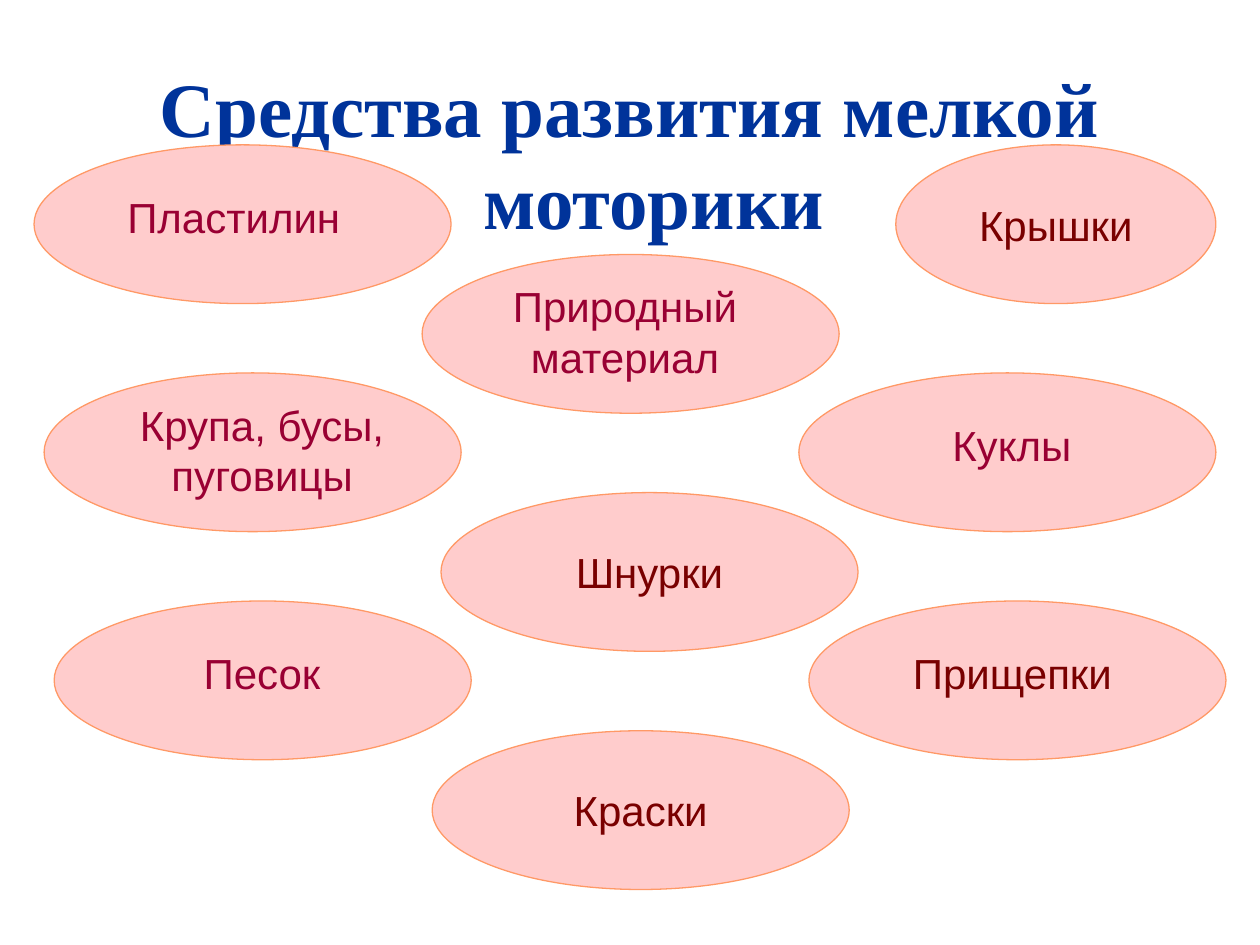
from pptx import Presentation
from pptx.dml.color import RGBColor
from pptx.enum.shapes import MSO_SHAPE as Shape
from pptx.enum.text import MSO_ANCHOR as Anchor, PP_ALIGN as Align
from pptx.util import Inches, Pt

OVAL_W, OVAL_H = 3.31, 1.26
SIDE_TOP, SIDE_STEP = 1.15, 1.81
MIDDLE_TOP, MIDDLE_STEP = 2.02, 1.89
SHIFT = 0.08
LEFT_X, RIGHT_X = 0.27, 6.34
RIGHT_EDGE = RIGHT_X + OVAL_W
NARROW_W = 2.54
PLUM, MAROON = "990033", "790000"


def color(value):
    return RGBColor.from_string(value)


def inches(box):
    return [Inches(length) for length in box]


def write(frame, words, size, font, ink, bold=False):
    paragraph = frame.paragraphs[0]
    paragraph.alignment = Align.CENTER
    run = paragraph.add_run()
    run.text = words
    run.font.size = Pt(size)
    run.font.name = font
    run.font.bold = bold
    run.font.color.rgb = color(ink)
    return paragraph


def add_title(slide, box):
    frame = slide.shapes.add_textbox(*inches(box)).text_frame
    frame.word_wrap = True
    heading = write(frame, "Средства развития мелкой моторики",
                    44, "Times New Roman", "00339A", bold=True)
    indent = heading._p.get_or_add_pPr()
    indent.set("marL", str(Inches(0.38)))
    indent.set("indent", str(-Inches(0.38)))


def add_oval(slide, box):
    oval = slide.shapes.add_shape(Shape.OVAL, *inches(box))
    oval.shadow.inherit = False
    oval.fill.solid()
    oval.fill.fore_color.rgb = color("FFCCCC")
    oval.line.color.rgb = color("FF9966")
    oval.line.width = Pt(0.75)
    return oval


def add_centred_oval(slide, box, words):
    frame = add_oval(slide, box).text_frame
    frame.word_wrap = False
    frame.vertical_anchor = Anchor.MIDDLE
    write(frame, words, 24, "Arial", MAROON)


def add_labelled_oval(slide, box, words, inset, width, lines=1, ink=PLUM):
    """Oval with a separate label, inset from its left edge."""
    add_oval(slide, box)
    left, top = box[:2]
    drop, height = (0.32, 0.5) if lines == 1 else (0.16, 0.9)
    label = slide.shapes.add_textbox(
        *inches((left + inset, top + drop, width, height)))
    label.text_frame.word_wrap = True
    write(label.text_frame, words, 24, "Arial", ink)


def side_box(x, row, shift):
    return x + shift * SHIFT, SIDE_TOP + row * SIDE_STEP, OVAL_W, OVAL_H


def middle_box(x, row):
    return x, MIDDLE_TOP + row * MIDDLE_STEP, OVAL_W, OVAL_H


def add_left_column(slide):
    materials = [("Пластилин", 0.56, 2.05, 1),
                 ("Крупа, бусы, пуговицы", 0.63, 2.2, 2),
                 ("Песок", 0.55, 2.2, 1)]
    for row, material in enumerate(materials):
        add_labelled_oval(slide, side_box(LEFT_X, row, row), *material)


def add_middle_column(slide):
    add_labelled_oval(slide, middle_box(3.35, 0),
                      "Природный материал", 0.47, 2.28, lines=2)
    add_centred_oval(slide, middle_box(3.5, 1), "Шнурки")
    add_centred_oval(slide, middle_box(3.43, 2), "Краски")


def add_right_column(slide):
    lids = RIGHT_EDGE - NARROW_W, SIDE_TOP, NARROW_W, OVAL_H
    add_centred_oval(slide, lids, "Крышки")
    add_labelled_oval(slide, side_box(RIGHT_X, 1, 0), "Куклы", 0.63, 2.12)
    add_labelled_oval(slide, side_box(RIGHT_X, 2, 1), "Прищепки", 0.63, 1.97,
                      ink=MAROON)


def main():
    deck = Presentation()
    deck.slide_width, deck.slide_height = inches((10, 7.5))
    slide = deck.slides.add_slide(deck.slide_layouts[6])
    add_title(slide, (0.75, 0.43, 8.5, 0.71))
    add_left_column(slide)
    add_middle_column(slide)
    add_right_column(slide)
    deck.save("out.pptx")


if __name__ == "__main__":
    main()
